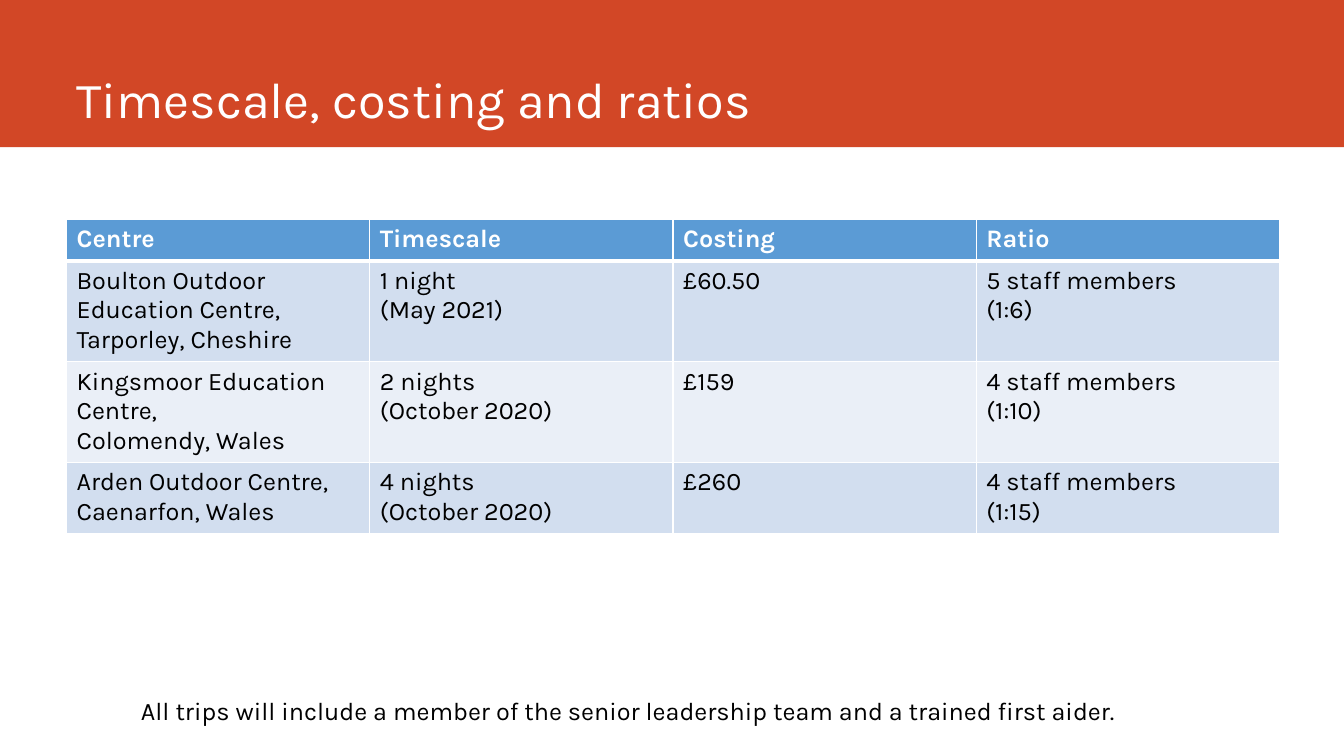
import pptx
import pptx.dml.color
import pptx.enum.shapes
import pptx.enum.text
import pptx.oxml
import pptx.oxml.ns
import pptx.util

Inches = pptx.util.Inches
Pt = pptx.util.Pt

WHITE, BLACK = "FFFFFF", "000000"
BAND = "D24726"
HEAD = "5B9BD5"
STRIPES = ("D2DEEF", "EAEFF7")
BODY = {"name": "Karla", "size": Pt(18), "bold": False}

ROWS = [
    ("Centre", "Timescale", "Costing", "Ratio"),
    ("Boulton Outdoor Education Centre,\nTarporley, Cheshire",
     "1 night\n(May 2021)", "£60.50", "5 staff members\n(1:6)"),
    ("Kingsmoor Education Centre,\nColomendy, Wales",
     "2 nights\n(October 2020)", "£159", "4 staff members\n(1:10)"),
    ("Arden Outdoor Centre,\nCaenarfon, Wales",
     "4 nights\n(October 2020)", "£260", "4 staff members\n(1:15)"),
]
HEIGHTS = (0.41, 1, 1, 0.7)


def color(code):
    return pptx.dml.color.RGBColor.from_string(code)


def write(frame, text, ink, **form):
    """Fill a text frame, one paragraph per line of text."""
    frame.text = text
    for para in frame.paragraphs:
        for key, value in {**BODY, **form}.items():
            setattr(para.font, key, value)
        para.font.color.rgb = color(ink)


def add_band(slide, width):
    band = slide.shapes.add_shape(
        pptx.enum.shapes.MSO_SHAPE.RECTANGLE, 0, 0, width, Inches(1.46))
    band.shadow.inherit = False
    band.fill.solid()
    band.fill.fore_color.rgb = color(BAND)
    band.line.fill.background()


def add_text(slide, box, text, ink, anchor, **form):
    frame = slide.shapes.add_textbox(*map(Inches, box)).text_frame
    frame.word_wrap = True
    frame.vertical_anchor = anchor
    write(frame, text, ink, **form)


def add_edge(cell, side, width):
    space = pptx.oxml.ns.nsdecls("a")
    edge = pptx.oxml.parse_xml(
        f'<a:ln{side} {space} w="{Pt(width)}"><a:solidFill>'
        f'<a:srgbClr val="{WHITE}"/></a:solidFill></a:ln{side}>')
    cell._tc.get_or_add_tcPr().append(edge)


def add_grid(slide, rows, heights):
    box = map(Inches, (0.66, 2.18, 12.03, sum(heights)))
    table = slide.shapes.add_table(len(rows), len(rows[0]), *box).table
    for i, (row, height) in enumerate(zip(rows, heights)):
        table.rows[i].height = Inches(height)
        for j, text in enumerate(row):
            cell = table.cell(i, j)
            edges = {"L": 1, "R": 1, "T": 3 if i == 1 else 1, "B": 3 if i == 0 else 1}
            for side, width in edges.items():
                add_edge(cell, side, width)
            cell.fill.solid()
            cell.fill.fore_color.rgb = color(STRIPES[(i - 1) % 2] if i else HEAD)
            write(cell.text_frame, text, BLACK if i else WHITE, bold=i == 0)


def main():
    deck = pptx.Presentation()
    deck.slide_width, deck.slide_height = Inches(13.33), Inches(7.5)
    slide = deck.slides.add_slide(deck.slide_layouts[6])
    anchor = pptx.enum.text.MSO_ANCHOR
    add_band(slide, deck.slide_width)
    add_text(slide, (0.66, 0, 11.76, 1.32), "Timescale, costing and ratios",
             WHITE, anchor.BOTTOM, size=Pt(36))
    add_grid(slide, ROWS, HEIGHTS)
    add_text(slide, (1.3, 6.85, 11.39, 0.4),
             "All trips will include a member of the senior leadership team "
             "and a trained first aider.", BLACK, anchor.TOP)
    deck.save("out.pptx")


if __name__ == "__main__":
    main()
